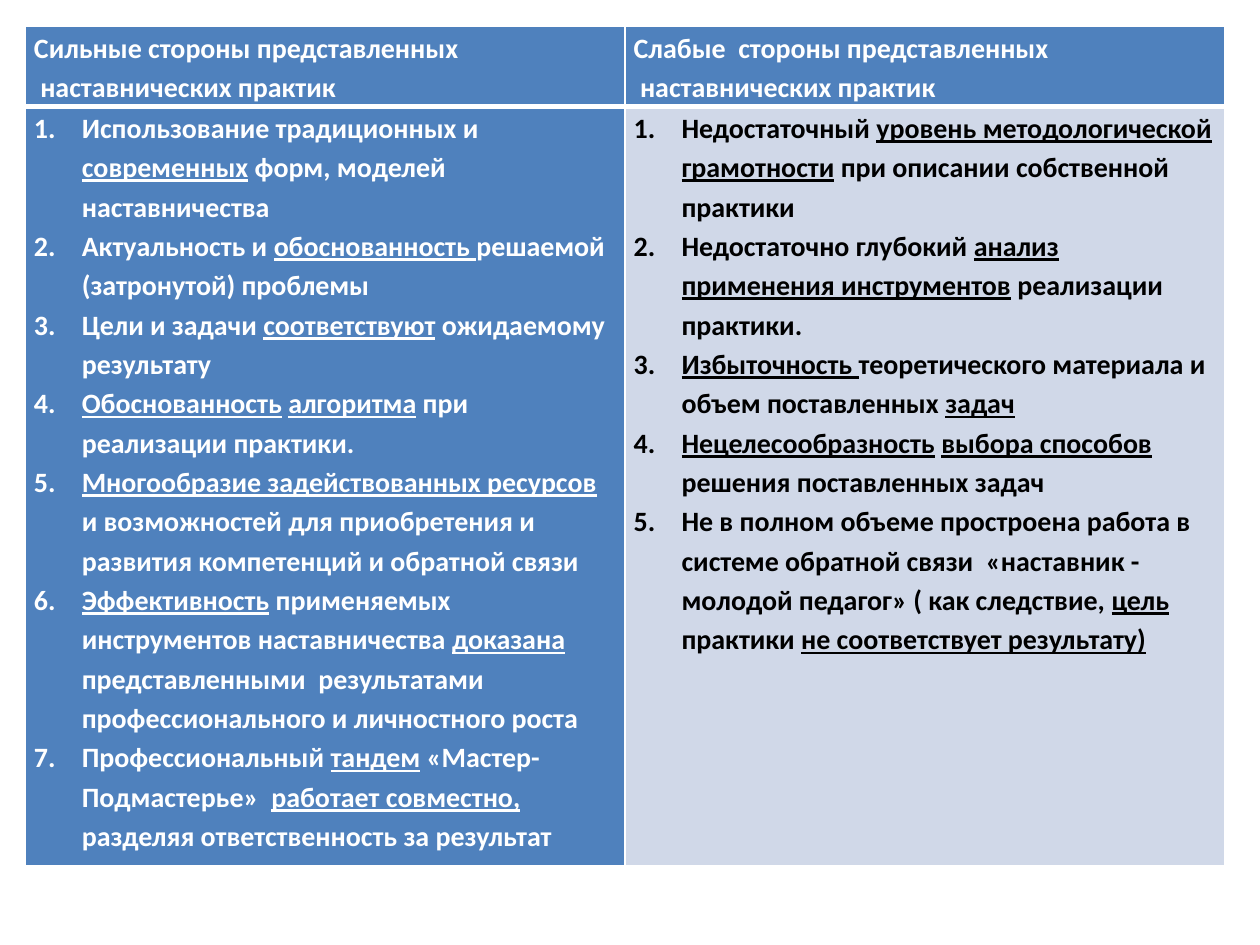
from dataclasses import dataclass

from lxml import etree
from pptx import Presentation
from pptx.dml.color import RGBColor
from pptx.oxml.ns import qn
from pptx.util import Inches, Pt

WIDE, HIGH = Inches(10), Inches(7.5)
LEFT, TOP = 0.02, 0.028
COL = 0.476
ROWS = (0.085, 0.803)
PAD, HANG = Inches(0.07), Inches(0.38)
FONT, SIZE, LEAD = "Calibri", 16, 1.15
THIN, THICK = 1, 3
HUES = {"blue": "4F81BD", "pale": "D0D8E8", "white": "FFFFFF", "black": "000000"}


@dataclass
class Column:
    head: list[str]
    items: list[str]
    fill: str
    ink: str


COLUMNS = [
    Column(
        ["Сильные стороны представленных", " наставнических практик"],
        [
            "Использование традиционных и _современных_ форм, моделей наставничества",
            "Актуальность и _обоснованность _решаемой (затронутой) проблемы",
            "Цели и задачи _соответствуют_ ожидаемому результату",
            "_Обоснованность_ _алгоритма_ при реализации практики.",
            "_Многообразие задействованных ресурсов_ и возможностей для приобретения "
            "и развития компетенций и обратной связи",
            "_Эффективность_ применяемых инструментов наставничества _доказана _"
            "представленными  результатами профессионального и личностного роста",
            "Профессиональный _тандем_ «Мастер-Подмастерье»  _работает совместно,_ "
            "разделяя ответственность за результат",
        ],
        "blue", "white",
    ),
    Column(
        ["Слабые  стороны представленных", " наставнических практик"],
        [
            "Недостаточный _уровень методологической грамотности_ при описании "
            "собственной практики",
            "Недостаточно глубокий _анализ применения инструментов_ реализации практики.",
            "_Избыточность _теоретического материала и объем поставленных _задач_",
            "_Нецелесообразность_ _выбора способов_ решения поставленных задач",
            "Не в полном объеме простроена работа в системе обратной связи  "
            "«наставник - молодой педагог» ( как следствие, _цель_ практики "
            "_не соответствует результату)_",
        ],
        "pale", "black",
    ),
]


def hue(name: str) -> RGBColor:
    return RGBColor.from_string(HUES[name])


def write(frame, lines: list[str], *, ink: str, listed: bool = False) -> None:
    for n, line in enumerate(lines):
        para = frame.paragraphs[0] if n == 0 else frame.add_paragraph()
        para.line_spacing = LEAD
        if listed:
            props = para._p.get_or_add_pPr()
            props.set("marL", str(HANG))
            props.set("indent", str(-HANG))
            etree.SubElement(props, qn("a:buFont"), typeface="+mj-lt")
            etree.SubElement(props, qn("a:buAutoNum"), type="arabicPeriod")
        for k, part in enumerate(line.split("_")):
            if part:
                run = para.add_run()
                run.text = part
                font = run.font
                font.name, font.size, font.bold = FONT, Pt(SIZE), True
                font.underline = k % 2 == 1
                font.color.rgb = hue(ink)


def edge(cell, **widths: float) -> None:
    props = cell._tc.get_or_add_tcPr()
    for side in "LRTB":
        width = Pt(widths.get(side, THIN))
        line = etree.SubElement(props, qn(f"a:ln{side}"), w=str(width))
        solid = etree.SubElement(line, qn("a:solidFill"))
        etree.SubElement(solid, qn("a:srgbClr"), val=HUES["white"])


def style(cell, fill: str) -> None:
    cell.margin_left = cell.margin_right = PAD
    cell.margin_top = cell.margin_bottom = 0
    cell.fill.solid()
    cell.fill.fore_color.rgb = hue(fill)


def main() -> None:
    deck = Presentation()
    deck.slide_width, deck.slide_height = WIDE, HIGH
    slide = deck.slides.add_slide(deck.slide_layouts[6])
    count = len(COLUMNS)
    table = slide.shapes.add_table(
        len(ROWS), count, int(LEFT * WIDE), int(TOP * HIGH),
        int(COL * count * WIDE), int(sum(ROWS) * HIGH),
    ).table
    for row, share in zip(table.rows, ROWS):
        row.height = int(share * HIGH)
    for n, col in enumerate(COLUMNS):
        table.columns[n].width = int(COL * WIDE)
        head, body = table.cell(0, n), table.cell(1, n)
        edge(head, B=THICK)
        edge(body, T=THICK)
        style(head, "blue")
        style(body, col.fill)
        write(head.text_frame, col.head, ink="white")
        write(body.text_frame, col.items, ink=col.ink, listed=True)
    deck.save("out.pptx")


if __name__ == "__main__":
    main()
